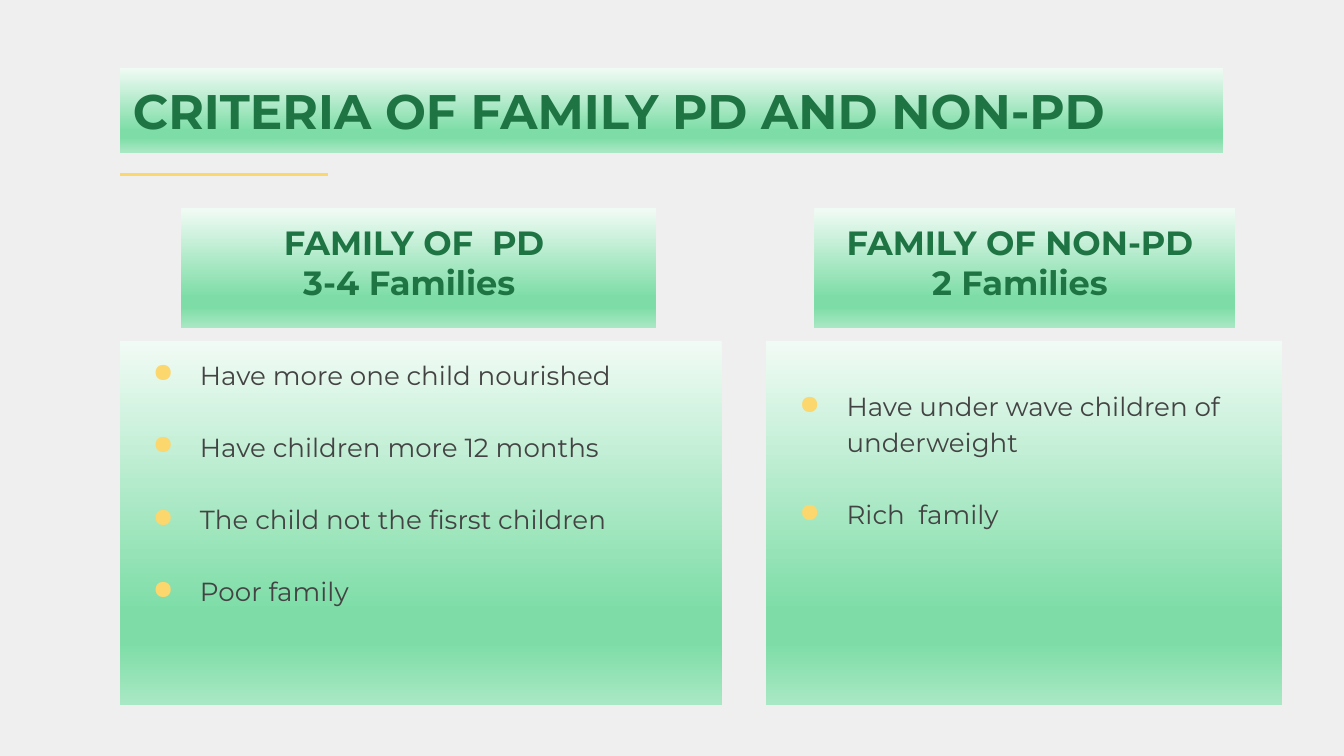
"""Build the slide that sets out the criteria for PD and non-PD families."""
from dataclasses import dataclass

from lxml import etree
from pptx import Presentation
from pptx.dml.color import RGBColor
from pptx.enum.shapes import MSO_CONNECTOR, MSO_SHAPE
from pptx.enum.text import MSO_ANCHOR, PP_ALIGN
from pptx.oxml.ns import qn
from pptx.util import Cm, Pt

RECTANGLE = MSO_SHAPE.RECTANGLE
STRAIGHT = MSO_CONNECTOR.STRAIGHT
TOP = MSO_ANCHOR.TOP
LEFT = PP_ALIGN.LEFT
CENTER = PP_ALIGN.CENTER


@dataclass(frozen=True)
class Theme:
    font: str = "Montserrat"
    background: str = "EFEFEF"
    heading: str = "1F7444"
    body: str = "434343"
    accent: str = "FBD76D"
    gradient: tuple = ((0, "F1FBF5"), (74, "7EDDA7"), (83, "7EDDA7"), (100, "A9E8C4"))
    title_size: float = 26
    heading_size: float = 18
    body_size: float = 14
    item_gap: float = 19.3
    inset: float = 0.25


class SlideBuilder:
    def __init__(self, slide, theme):
        self.slide = slide
        self.theme = theme
        fill = slide.background.fill
        fill.solid()
        fill.fore_color.rgb = RGBColor.from_string(theme.background)

    def panel(self, left, top, width, height):
        shape = self.slide.shapes.add_shape(
            RECTANGLE, Cm(left), Cm(top), Cm(width), Cm(height))
        shape.shadow.inherit = False
        shape.line.fill.background()
        shape.fill.gradient()
        shape.fill.gradient_angle = 270
        stops = shape._element.spPr.find(qn("a:gradFill")).find(qn("a:gsLst"))
        for stop in list(stops):
            stops.remove(stop)
        for position, color in self.theme.gradient:
            stop = etree.SubElement(stops, qn("a:gs"), pos=str(position * 1000))
            etree.SubElement(stop, qn("a:srgbClr"), val=color)
        text_frame = shape.text_frame
        text_frame.word_wrap = True
        text_frame.vertical_anchor = TOP
        inset = Cm(self.theme.inset)
        text_frame.margin_left = text_frame.margin_right = inset
        text_frame.margin_top = text_frame.margin_bottom = inset
        return text_frame

    def format_runs(self, paragraph, size, color, bold=False):
        for run in paragraph.runs:
            run.font.name = self.theme.font
            run.font.size = Pt(size)
            run.font.bold = bold
            run.font.color.rgb = RGBColor.from_string(color)

    def heading(self, text, box, size, alignment):
        text_frame = self.panel(*box)
        text_frame.text = text
        paragraph = text_frame.paragraphs[0]
        paragraph.alignment = alignment
        self.format_runs(paragraph, size, self.theme.heading, bold=True)

    def bullet_list(self, items, box, top_inset):
        text_frame = self.panel(*box)
        text_frame.margin_top = Cm(top_inset)
        text_frame.text = "\n".join(items)
        for paragraph in text_frame.paragraphs:
            paragraph.alignment = LEFT
            paragraph.line_spacing = 1.15
            paragraph.space_after = Pt(self.theme.item_gap)
            self.format_runs(paragraph, self.theme.body_size, self.theme.body)
            self.bullet(paragraph)

    def bullet(self, paragraph):
        properties = paragraph._p.get_or_add_pPr()
        properties.set("marL", str(Cm(1.27)))
        properties.set("indent", str(Cm(-0.89)))
        color = etree.SubElement(properties, qn("a:buClr"))
        etree.SubElement(color, qn("a:srgbClr"), val=self.theme.accent)
        etree.SubElement(properties, qn("a:buChar"), char="●")

    def rule(self, left, top, width):
        connector = self.slide.shapes.add_connector(
            STRAIGHT, Cm(left), Cm(top), Cm(left + width), Cm(top))
        connector.line.color.rgb = RGBColor.from_string(self.theme.accent)
        connector.line.width = Pt(1.5)
        etree.SubElement(connector._element.spPr, qn("a:effectLst"))


def main():
    presentation = Presentation()
    presentation.slide_width = Cm(25.4)
    presentation.slide_height = Cm(14.29)
    theme = Theme()
    builder = SlideBuilder(
        presentation.slides.add_slide(presentation.slide_layouts[6]), theme)

    margin = 2.26
    list_top, list_height = 6.45, 6.88
    heading_top, heading_height = 3.94, 2.26
    families = (
        ("FAMILY OF  PD \v3-4 Families  ", 3.43, 8.97,
         ("Have more one child nourished", "Have children more 12 months",
          "The child not the fisrst children", "Poor family"),
         margin, 11.38, theme.inset),
        ("FAMILY OF NON-PD \v2 Families ", 15.39, 7.95,
         ("Have under wave children of underweight", "Rich  family"),
         14.48, 9.75, 0.84),
    )

    builder.heading("CRITERIA OF FAMILY PD AND NON-PD",
                    (margin, 1.28, 20.86, 1.6), theme.title_size, LEFT)
    builder.rule(margin, 3.3, 3.94)
    for name, name_left, name_width, items, left, width, top_inset in families:
        builder.bullet_list(items, (left, list_top, width, list_height), top_inset)
        builder.heading(name, (name_left, heading_top, name_width, heading_height),
                        theme.heading_size, CENTER)

    presentation.save("out.pptx")


if __name__ == "__main__":
    main()
